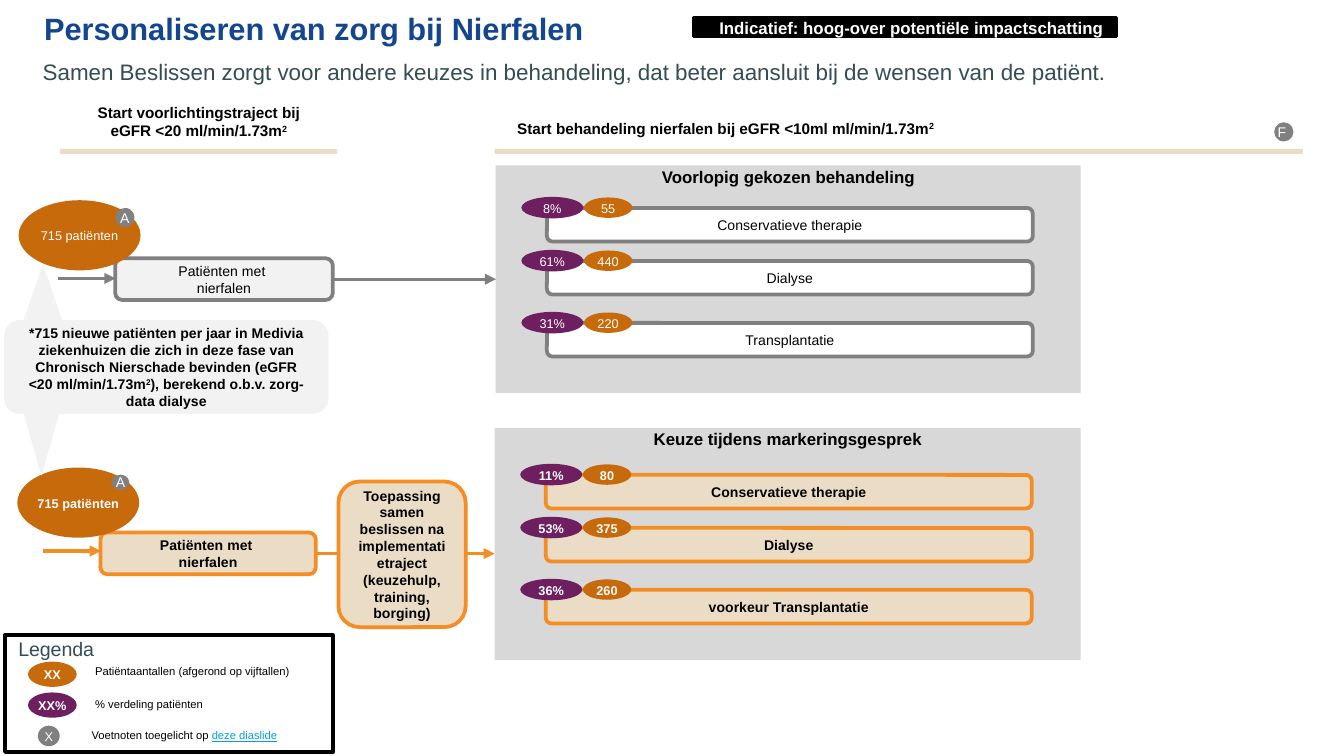
from dataclasses import dataclass

from lxml.etree import SubElement
from pptx import Presentation
from pptx.dml.color import RGBColor
from pptx.enum.shapes import MSO_CONNECTOR, MSO_SHAPE
from pptx.enum.text import MSO_ANCHOR, MSO_AUTO_SIZE, PP_ALIGN
from pptx.oxml.ns import qn
from pptx.util import Pt


@dataclass(frozen=True)
class Theme:
    """Colours, font and type sizes of the slide."""

    font: str = "Arial"
    black: str = "000000"
    white: str = "FFFFFF"
    blue: str = "13468F"
    slate: str = "364C55"
    link: str = "059EDF"
    gray: str = "808080"
    panel: str = "D8D8D8"
    pale: str = "F2F2F2"
    sand: str = "EBDDC5"
    orange: str = "F38D24"
    rust: str = "C66A0B"
    purple: str = "6D1F5F"
    title: float = 16.5
    subtitle: float = 12
    legend: float = 10.5
    heading: float = 9
    column: float = 8.2
    body: float = 7.5
    badge: float = 6.8
    small: float = 6


THEME = Theme()
NO_INSETS = (0, 0, 0, 0)
DEFAULT_INSETS = (7.2, 3.6, 7.2, 3.6)
RAISED = {"baseline": 30000}


def write(frame, *pieces, size=THEME.body, color=THEME.black, bold=False,
          align=PP_ALIGN.CENTER, anchor=MSO_ANCHOR.MIDDLE, insets=DEFAULT_INSETS,
          wrap=True, spacing=None):
    """Write strings or (string, format) pieces; a newline starts a paragraph."""
    frame.auto_size = MSO_AUTO_SIZE.NONE
    frame.word_wrap = wrap
    frame.vertical_anchor = anchor
    frame.margin_left, frame.margin_top, frame.margin_right, frame.margin_bottom = map(Pt, insets)
    paragraph = frame.paragraphs[0]
    for piece in pieces:
        text, extra = (piece, {}) if isinstance(piece, str) else piece
        for index, part in enumerate(text.split("\n")):
            if index:
                paragraph = frame.add_paragraph()
            run = paragraph.add_run()
            run.text = part
            run.font.name = THEME.font
            run.font.size = Pt(size)
            run.font.bold = bold
            run.font.color.rgb = RGBColor.from_string(extra.get("color", color))
            if "underline" in extra:
                run.font.underline = extra["underline"]
            if "baseline" in extra:
                run._r.get_or_add_rPr().set("baseline", str(extra["baseline"]))
    for paragraph in frame.paragraphs:
        paragraph.alignment = align
        if spacing:
            paragraph.line_spacing = spacing


class SlideBuilder:
    """Holds the theme and the current slide and adds each kind of element."""

    def __init__(self, slide, theme):
        self.slide = slide
        self.theme = theme

    def title(self, text, box):
        """Place and format the title placeholder."""
        shape = self.slide.shapes.title
        shape.left, shape.top, shape.width, shape.height = map(Pt, box)
        write(shape.text_frame, text, size=self.theme.title, color=self.theme.blue,
              bold=True, align=PP_ALIGN.LEFT, anchor=MSO_ANCHOR.TOP, insets=(5, 2.9, 5, 2.9))

    def label(self, box, *pieces, **text_format):
        """Add a text box."""
        shape = self.slide.shapes.add_textbox(*map(Pt, box))
        write(shape.text_frame, *pieces, **text_format)

    def shape(self, kind, box, fill, *pieces, line=None, weight=2, rotation=0, **text_format):
        """Add a filled preset shape with optional outline and text."""
        shape = self.slide.shapes.add_shape(kind, *map(Pt, box))
        shape.shadow.inherit = False
        shape.rotation = rotation
        shape.fill.solid()
        shape.fill.fore_color.rgb = RGBColor.from_string(fill)
        if line:
            shape.line.color.rgb = RGBColor.from_string(line)
            shape.line.width = Pt(weight)
        else:
            shape.line.fill.background()
        if pieces:
            write(shape.text_frame, *pieces, **text_format)

    def oval(self, box, fill, text, bold=False):
        """Add an oval with a white figure."""
        self.shape(MSO_SHAPE.OVAL, box, fill, text, size=self.theme.badge, bold=bold,
                   color=self.theme.white, insets=NO_INSETS, spacing=1.06)

    def footnote(self, box, letter, size=THEME.body):
        """Add a round footnote mark."""
        self.shape(MSO_SHAPE.FLOWCHART_CONNECTOR, box, self.theme.gray, letter, size=size,
                   color=self.theme.white, insets=NO_INSETS, wrap=False)

    def arrow(self, left, right, y, color):
        """Add a horizontal arrow pointing right."""
        connector = self.slide.shapes.add_connector(
            MSO_CONNECTOR.STRAIGHT, Pt(left), Pt(y), Pt(right), Pt(y))
        connector.line.color.rgb = RGBColor.from_string(color)
        connector.line.width = Pt(1.75)
        SubElement(connector.line._get_or_add_ln(), qn("a:tailEnd"), type="triangle")
        SubElement(connector._element.spPr, qn("a:effectLst"))

    def treatments(self, panel, heading, first_top, rows, fill, line, bold):
        """Add a panel of treatment bars with their share and patient count."""
        self.shape(MSO_SHAPE.RECTANGLE, panel, self.theme.panel, heading,
                   size=self.theme.heading, bold=True, anchor=MSO_ANCHOR.TOP,
                   insets=(5, 0, 5, 5), spacing=1.06)
        left = panel[0] + 27.4
        for offset, (name, share, count) in zip((0, 28.4, 61.6), rows):
            top = first_top + offset
            self.shape(MSO_SHAPE.ROUNDED_RECTANGLE, (left, top, 260.3, 18), fill, name,
                       line=line, bold=bold, insets=NO_INSETS, wrap=False)
            self.oval((left - 13.7, top - 5.9, 33.2, 11.5), self.theme.purple, share, bold)
            self.oval((left + 19.9, top - 5.6, 25.9, 10.9), self.theme.rust, count, bold)

    def patients(self, oval, step, arrow, fill, line, bold):
        """Add the incoming patient group and its step box."""
        self.shape(MSO_SHAPE.ROUNDED_RECTANGLE, step, fill, "Patiënten met \nnierfalen",
                   line=line, bold=bold)
        self.oval(oval, self.theme.rust, "715 patiënten", bold)
        self.arrow(*arrow, line)


def main():
    """Build and save the slide."""
    presentation = Presentation()
    presentation.slide_width, presentation.slide_height = Pt(720), Pt(405)
    builder = SlideBuilder(presentation.slides.add_slide(presentation.slide_layouts[5]), THEME)

    builder.title("Personaliseren van zorg bij Nierfalen", (18.7, 2.2, 658, 26.6))
    builder.label((15.8, 24.5, 661, 23),
                  "Samen Beslissen zorgt voor andere keuzes in behandeling, "
                  "dat beter aansluit bij de wensen van de patiënt.",
                  size=THEME.subtitle, color=THEME.slate, align=PP_ALIGN.LEFT,
                  anchor=MSO_ANCHOR.TOP, spacing=1.2)
    builder.shape(MSO_SHAPE.RECTANGLE, (371.5, 9.4, 226.8, 10.1), THEME.black,
                  "Indicatief: hoog-over potentiële impactschatting ",
                  line=THEME.black, weight=1.5, size=THEME.heading, color=THEME.white, bold=True,
                  align=PP_ALIGN.RIGHT, insets=(5, 5, 5, 5), wrap=False, spacing=1.06)

    builder.label((43.9, 56.2, 125.3, 22.3),
                  "Start voorlichtingstraject bij eGFR <20 ml/min/1.73m", ("2", RAISED),
                  size=THEME.column, bold=True, anchor=MSO_ANCHOR.BOTTOM)
    builder.label((270, 63.7, 247, 22.3),
                  "Start behandeling nierfalen bij eGFR <10ml ml/min/1.73m", ("2", RAISED),
                  size=THEME.column, bold=True, align=PP_ALIGN.LEFT,
                  anchor=MSO_ANCHOR.TOP, insets=(7.2, 0, 7.2, 0))
    for left, width in ((32.2, 148.4), (265, 433)):
        builder.shape(MSO_SHAPE.RECTANGLE, (left, 79.7, width, 2.7), THEME.sand)
    builder.footnote((682.6, 65.5, 10.3, 10.3), "F ")

    builder.treatments((265.6, 88.6, 313.4, 122), "Voorlopig gekozen behandeling", 111.4,
                       (("Conservatieve therapie", "8%", "55"),
                        ("Dialyse", "61%", "440"),
                        ("Transplantatie", "31%", "220")),
                       THEME.white, THEME.gray, False)
    builder.treatments((265, 229.2, 313.9, 124.4), "Keuze tijdens markeringsgesprek", 254.4,
                       (("Conservatieve therapie", "11%", "80"),
                        ("Dialyse", "53%", "375"),
                        ("voorkeur Transplantatie", "36%", "260")),
                       THEME.sand, THEME.orange, True)

    builder.patients((10, 107.3, 65.3, 37.6), (61.7, 138.4, 116.6, 22.3), (31, 61.9, 149.2),
                     THEME.pale, THEME.gray, False)
    builder.patients((9.3, 250.5, 65.3, 37.6), (53.8, 285.3, 115.4, 22.4), (23, 54, 295.2),
                     THEME.sand, THEME.orange, True)
    builder.arrow(178, 265.7, 149.6, THEME.gray)
    builder.arrow(169.2, 265, 296.6, THEME.orange)
    builder.shape(MSO_SHAPE.ROUNDED_RECTANGLE, (181.3, 258, 68.2, 78), THEME.sand,
                  "Toepassing samen beslissen na implementatietraject "
                  "(keuzehulp, training, borging)", line=THEME.orange, bold=True)
    builder.footnote((61.8, 111.4, 10.3, 10.3), "A")
    builder.footnote((59.9, 254.3, 9.4, 8.2), "A")

    builder.shape(MSO_SHAPE.RECTANGLE, (2.7, 340.3, 175.7, 62.6), THEME.white, line=THEME.black)
    builder.label((2.7, 337.5, 65.5, 20), "Legenda", size=THEME.legend, color=THEME.slate,
                  align=PP_ALIGN.LEFT, anchor=MSO_ANCHOR.TOP)
    builder.oval((15, 354.5, 26.1, 13.5), THEME.rust, "XX", True)
    builder.oval((15, 371, 26.1, 13.5), THEME.purple, "XX%", True)
    builder.footnote((20.3, 388.8, 11.7, 11), "X", THEME.badge)
    legend_labels = (
        ((43.9, 355, 148.3, 9.4), ("Patiëntaantallen (afgerond op vijftallen)",)),
        ((43.9, 371, 105.8, 12.2), ("% verdeling patiënten",)),
        ((42, 389, 115.2, 10), ("Voetnoten toegelicht op ",
                                ("deze diaslide", {"color": THEME.link, "underline": True}))),
    )
    for box, pieces in legend_labels:
        builder.label(box, *pieces, size=THEME.small, align=PP_ALIGN.LEFT)

    builder.shape(MSO_SHAPE.ROUNDED_RECTANGLE, (2.3, 171.5, 173.7, 50.3), THEME.pale,
                  "*715 nieuwe patiënten per jaar in Medivia ziekenhuizen die zich in deze fase "
                  "van Chronisch Nierschade bevinden (eGFR <20 ml/min/1.73m", ("2", RAISED),
                  "), berekend o.b.v. zorg-data dialyse", bold=True)
    builder.shape(MSO_SHAPE.ISOSCELES_TRIANGLE, (12.2, 141.8, 21.6, 31), THEME.pale)
    builder.shape(MSO_SHAPE.ISOSCELES_TRIANGLE, (12.5, 221, 19.4, 33.8), THEME.pale, rotation=180)

    presentation.save("out.pptx")


if __name__ == "__main__":
    main()
